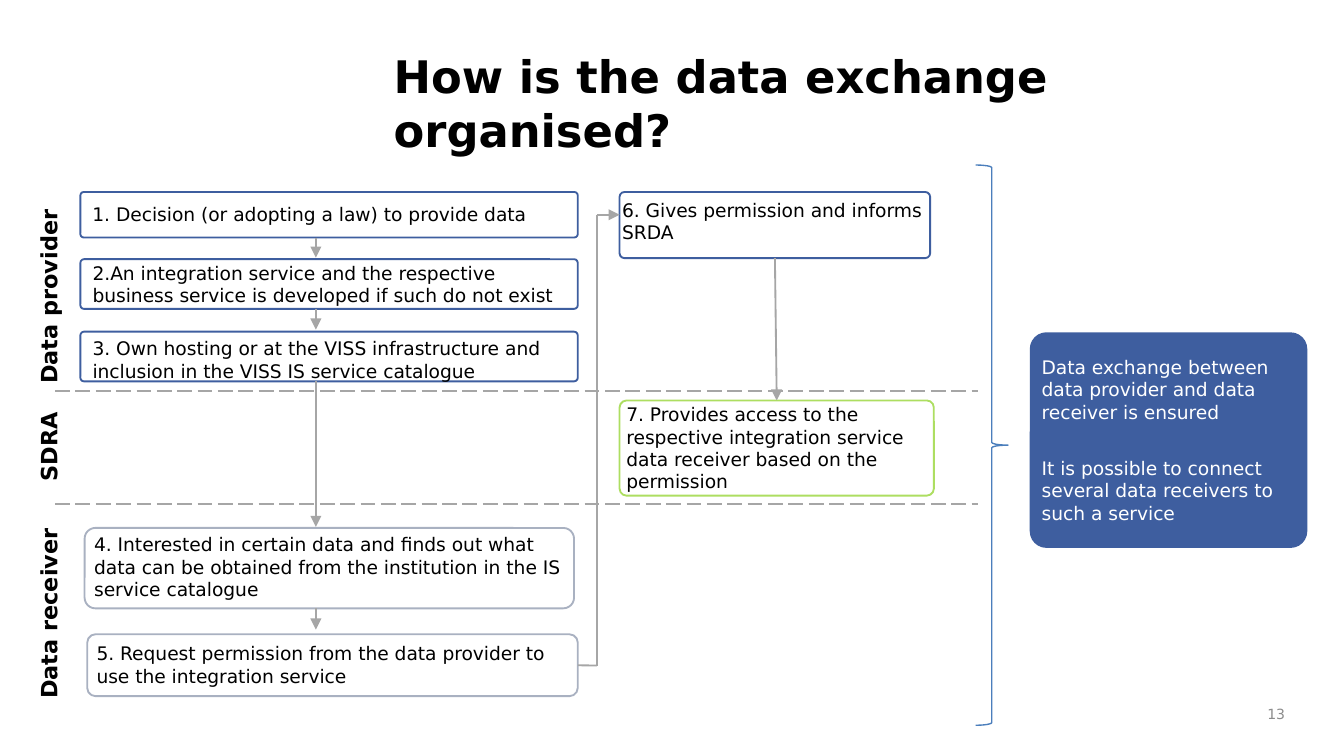
import lxml.etree
import pptx
import pptx.dml.color
import pptx.enum.dml
import pptx.enum.shapes
import pptx.enum.text
import pptx.oxml.ns
import pptx.util

Cm = pptx.util.Cm
Pt = pptx.util.Pt
RGBColor = pptx.dml.color.RGBColor
SHAPE = pptx.enum.shapes.MSO_SHAPE
ALIGN = pptx.enum.text.PP_ALIGN
ANCHOR = pptx.enum.text.MSO_ANCHOR
qn = pptx.oxml.ns.qn

FONT = "DejaVu Sans"
BLACK = RGBColor(0x00, 0x00, 0x00)
WHITE = RGBColor(0xFF, 0xFF, 0xFF)
BLUE = RGBColor(0x3E, 0x5E, 0x9F)
GREEN = RGBColor(0xAD, 0xDE, 0x61)
STEEL = RGBColor(0xA9, 0xB1, 0xC1)
GREY = RGBColor(0xA6, 0xA6, 0xA6)
NUMBER_GREY = RGBColor(0x8C, 0x8C, 0x8C)
BRACE_BLUE = RGBColor(0x4B, 0x7E, 0xBC)

BOTTOM_SIDE, TOP_SIDE, RIGHT_SIDE = 2, 0, 3


def write(frame, text, size=10, color=BLACK, bold=False, align=ALIGN.LEFT,
          anchor=ANCHOR.TOP, insets=(0, 0, 0, 0), gap=0):
    """Fill a text frame, one paragraph a line; insets are left, top, right, bottom in cm."""
    frame.word_wrap = True
    frame.auto_size = pptx.enum.text.MSO_AUTO_SIZE.NONE
    frame.vertical_anchor = anchor
    (frame.margin_left, frame.margin_top,
     frame.margin_right, frame.margin_bottom) = map(Cm, insets)
    for index, line in enumerate(text.split("\n")):
        para = frame.add_paragraph() if index else frame.paragraphs[0]
        para.alignment = align
        para.space_before = Pt(gap if index else 0)
        span = para.add_run()
        span.text = line
        span.font.name = FONT
        span.font.size = Pt(size)
        span.font.bold = bold
        span.font.color.rgb = color


class FlowPage:
    def __init__(self, deck):
        self.page = deck.slides.add_slide(deck.slide_layouts[5])
        self.shapes = self.page.shapes
        self.line_width = Pt(1)

    def title(self, text, left, top, width, height):
        box = self.shapes.title
        box.left, box.top, box.width, box.height = map(Cm, (left, top, width, height))
        write(box.text_frame, text, size=24, bold=True, insets=(0.25, 0.13, 0.25, 0.13))

    def text(self, text, left, top, width, height, **style):
        box = self.shapes.add_textbox(*map(Cm, (left, top, width, height)))
        write(box.text_frame, text, **style)
        return box

    def lane_label(self, text, middle, length=3.5):
        """Bottom-to-top label centred on the height of its lane."""
        box = self.text(text, 0.66, middle - length / 2, 0.5, length,
                        size=12, bold=True, align=ALIGN.CENTER)
        box.text_frame._txBody.bodyPr.set("vert", "vert270")

    def step(self, text, left, top, width, height, insets, outline,
             fill=WHITE, rounding=0.074, **style):
        box = self.shapes.add_shape(SHAPE.ROUNDED_RECTANGLE,
                                    *map(Cm, (left, top, width, height)))
        box.adjustments[0] = rounding
        box.shadow.inherit = False
        box.fill.solid()
        box.fill.fore_color.rgb = fill
        box.line.color.rgb = outline
        box.line.width = self.line_width
        write(box.text_frame, text, insets=(*insets, 0, 0), **style)
        return box

    def line(self, x1, y1, x2, y2, arrow=False, dashed=False):
        link = self.shapes.add_connector(pptx.enum.shapes.MSO_CONNECTOR.STRAIGHT,
                                         *map(Cm, (x1, y1, x2, y2)))
        link.line.color.rgb = GREY
        link.line.width = self.line_width
        if dashed:
            link.line.dash_style = pptx.enum.dml.MSO_LINE.LONG_DASH
        properties = link._element.spPr
        if arrow:
            lxml.etree.SubElement(properties.find(qn("a:ln")), qn("a:tailEnd"), type="triangle")
        lxml.etree.SubElement(properties, qn("a:effectLst"))
        return link

    def brace(self, left, top, width, height):
        brace = self.shapes.add_shape(SHAPE.RIGHT_BRACE, *map(Cm, (left, top, width, height)))
        brace.shadow.inherit = False
        brace.fill.background()
        brace.line.color.rgb = BRACE_BLUE
        brace.line.width = Pt(0.75)


def main():
    deck = pptx.Presentation()
    deck.slide_width, deck.slide_height = Cm(25.4), Cm(14.29)
    flow = FlowPage(deck)

    flow.title("How is the data exchange organised?", 7.19, 0.79, 18.21, 2.21)
    for label, middle in (("Data provider", 5.61), ("SDRA", 8.45), ("Data receiver", 11.6)):
        flow.lane_label(label, middle)
    for border in (7.39, 9.53):
        flow.line(1.04, border, 18.49, border, dashed=True)

    flow.step("1. Decision (or adopting a law) to provide data",
              1.52, 3.63, 9.4, 0.86, (0.21, 0.18), BLUE)
    flow.step("2.An integration service and the respective business service "
              "is developed if such do not exist",
              1.52, 4.9, 9.4, 0.94, (0.21, 0.03), BLUE)
    flow.step("3. Own hosting or at the VISS infrastructure and inclusion "
              "in the VISS IS service catalogue",
              1.52, 6.27, 9.4, 0.94, (0.21, 0.08), BLUE)
    flow.step("4. Interested in certain data and finds out what data can be "
              "obtained from the institution in the IS service catalogue",
              1.6, 9.98, 9.25, 1.52, (0.12, 0.04), STEEL, rounding=0.134)
    request = flow.step("5. Request permission from the data provider to use "
                        "the integration service",
                        1.65, 11.99, 9.27, 1.17, (0.13, 0.1), STEEL, rounding=0.134)
    permission = flow.step("6. Gives permission and informs SRDA",
                           11.71, 3.63, 5.87, 1.25, (0.02, 0.1), BLUE)
    access = flow.step("7. Provides access to the respective integration service "
                       "data receiver based on the permission",
                       11.71, 7.57, 5.94, 1.8, (0.09, 0.01), GREEN)
    flow.step("Data exchange between data provider and data receiver is ensured\n"
              "It is possible to connect several data receivers to such a service",
              19.48, 6.3, 5.21, 4.04, (0.12, 0.34), BLUE, fill=BLUE, color=WHITE, gap=18)

    for start, end in ((4.49, 4.87), (5.84, 6.23), (7.21, 9.96), (11.5, 11.9)):
        flow.line(5.97, start, 5.97, end, arrow=True)

    flow.line(10.92, 12.58, 11.28, 12.58).begin_connect(request, RIGHT_SIDE)
    flow.line(11.28, 12.58, 11.28, 4.06)
    flow.line(11.28, 4.06, 11.71, 4.06, arrow=True)

    grant = flow.line(14.65, 4.88, 14.68, 7.57, arrow=True)
    grant.begin_connect(permission, BOTTOM_SIDE)
    grant.end_connect(access, TOP_SIDE)

    flow.brace(18.44, 3.12, 0.61, 10.59)
    flow.text("13", 23.7, 13.18, 0.84, 0.64, size=7.5, color=NUMBER_GREY,
              align=ALIGN.RIGHT, anchor=ANCHOR.MIDDLE, insets=(0.13, 0.13, 0.25, 0.13))
    deck.save("out.pptx")


if __name__ == "__main__":
    main()
